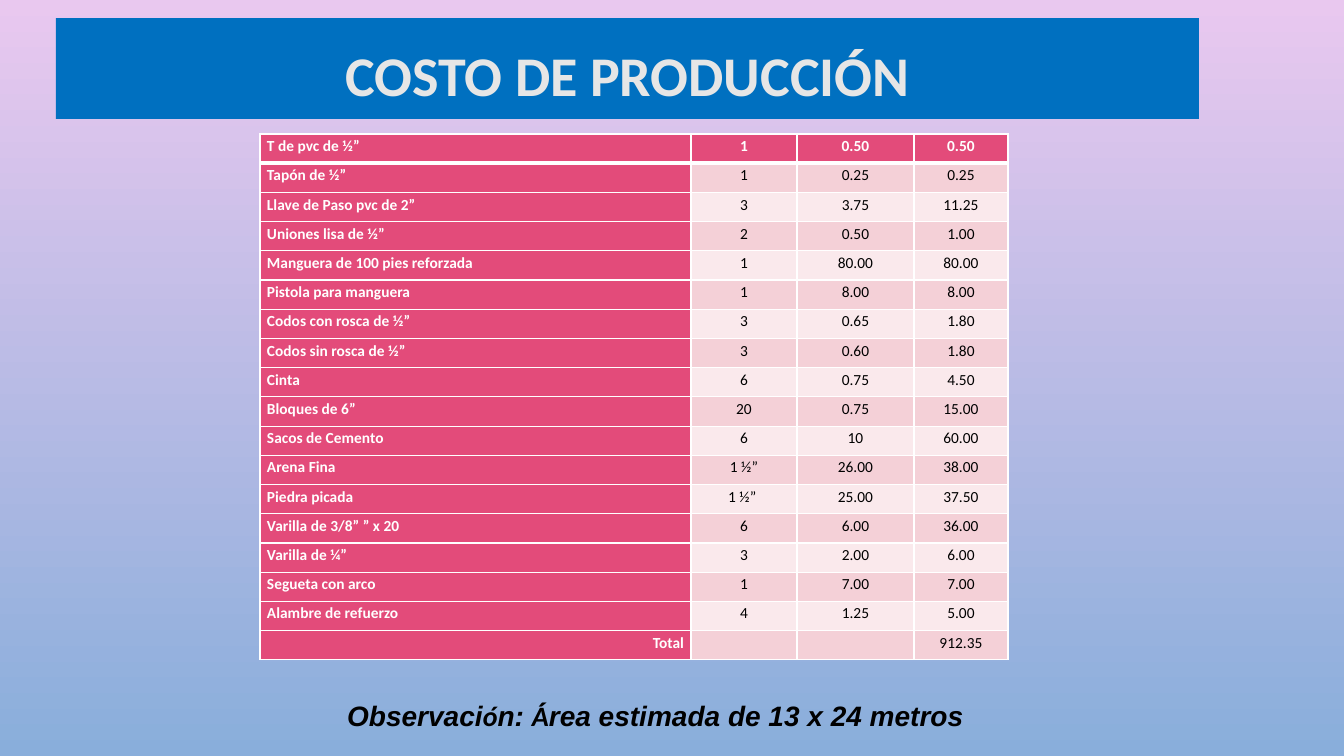
from lxml.etree import SubElement
from pptx import Presentation
from pptx.dml.color import RGBColor
from pptx.enum.shapes import MSO_SHAPE
from pptx.enum.text import MSO_ANCHOR, MSO_AUTO_SIZE, PP_ALIGN
from pptx.oxml.ns import qn
from pptx.util import Pt

SCALE = 914400 / 100.8
WHITE, BLACK, ROSE = "FFFFFF", "000000", "E34B7A"
BANDS = ("FAE9EC", "F4D0D7")
COLUMNS = (431, 106, 117, 94)
TABLE_HEIGHT = 526
COSTS = (
    ("T de pvc de ½”", "1", "0.50", "0.50"),
    ("Tapón de ½”", "1", "0.25", "0.25"),
    ("Llave de Paso pvc de 2”", "3", "3.75", "11.25"),
    ("Uniones lisa de ½”", "2", "0.50", "1.00"),
    ("Manguera de 100 pies reforzada", "1", "80.00", "80.00"),
    ("Pistola para manguera", "1", "8.00", "8.00"),
    ("Codos con rosca de ½”", "3", "0.65", "1.80"),
    ("Codos sin rosca de ½”", "3", "0.60", "1.80"),
    ("Cinta", "6", "0.75", "4.50"),
    ("Bloques de 6”", "20", "0.75", "15.00"),
    ("Sacos de Cemento", "6", "10", "60.00"),
    ("Arena Fina", "1 ½”", "26.00", "38.00"),
    ("Piedra picada", "1 ½” ", "25.00", "37.50"),
    ("Varilla de 3/8” ” x 20", "6", "6.00", "36.00"),
    ("Varilla de ¼”", "3", "2.00", "6.00"),
    ("Segueta con arco", "1", "7.00", "7.00"),
    ("Alambre de refuerzo", "4", "1.25", "5.00"),
    ("Total", "", "", "912.35"),
)
OBSERVATION = (
    ("Observaci", "Arial"),
    ("ó", "Calibri"),
    ("n: ", "Arial"),
    ("Á", "Calibri"),
    ("rea estimada de 13 x 24 metros", "Arial"),
)


def px(length):
    return round(length * SCALE)


def paint(target, color):
    target.solid()
    target.fore_color.rgb = RGBColor.from_string(color)


def apply(target, values):
    for name, value in values.items():
        setattr(target, name, value)


def add_run(paragraph, text, color, **values):
    run = paragraph.add_run()
    run.text = text
    apply(run.font, values)
    run.font.color.rgb = RGBColor.from_string(color)


def set_background(slide):
    fill = slide.background.fill
    fill.gradient()
    fill.gradient_angle = 270
    for stop, color, position in zip(fill.gradient_stops, ("E9C8EF", "89AEDB"), (0, 1)):
        stop.color.rgb = RGBColor.from_string(color)
        stop.position = position


def add_title(slide):
    banner = slide.shapes.add_shape(MSO_SHAPE.RECTANGLE, px(56), px(18), px(1143), px(101))
    banner.shadow.inherit = False
    paint(banner.fill, "0070C0")
    banner.line.fill.background()
    apply(banner.text_frame, {
        "word_wrap": True,
        "vertical_anchor": MSO_ANCHOR.MIDDLE,
        "margin_top": px(26),
        "margin_bottom": px(6),
    })
    heading = banner.text_frame.paragraphs[0]
    apply(heading, {"alignment": PP_ALIGN.CENTER, "line_spacing": 0.9})
    add_run(heading, "COSTO DE PRODUCCIÓN", "E6E6E6", size=Pt(40), name="Calibri", bold=True)


def add_borders(cell, widths):
    properties = cell._tc.get_or_add_tcPr()
    for position, (side, width) in enumerate(widths.items()):
        border = properties.makeelement(qn(f"a:{side}"), {"w": str(Pt(width))})
        solid = SubElement(border, qn("a:solidFill"))
        SubElement(solid, qn("a:srgbClr"), val=WHITE)
        properties.insert(position, border)


def fill_cell(cell, text, row, column):
    emphasized = row == 0 or column == 0
    apply(cell, {
        "margin_left": px(7),
        "margin_right": px(7),
        "margin_top": 0,
        "margin_bottom": 0,
        "vertical_anchor": MSO_ANCHOR.TOP,
    })
    paint(cell.fill, ROSE if emphasized else BANDS[row % 2])
    add_borders(cell, {
        "lnL": 1,
        "lnR": 1,
        "lnT": 3 if row == 1 else 1,
        "lnB": 3 if row == 0 else 1,
    })
    entry = cell.text_frame.paragraphs[0]
    alignment = PP_ALIGN.CENTER
    if column == 0:
        alignment = PP_ALIGN.RIGHT if text == "Total" else PP_ALIGN.LEFT
    apply(entry, {"alignment": alignment, "line_spacing": 1.15})
    if text:
        add_run(entry, text, WHITE if emphasized else BLACK,
                size=Pt(11), name="Calibri", bold=emphasized)
    else:
        SubElement(entry._p, qn("a:endParaRPr"), sz="1100")


def add_costs(slide):
    costs = slide.shapes.add_table(len(COSTS), len(COLUMNS), px(260), px(134),
                                   px(sum(COLUMNS)), px(TABLE_HEIGHT)).table
    apply(costs, {"first_row": False, "horz_banding": False})
    for column, width in zip(costs.columns, COLUMNS):
        column.width = px(width)
    for row, entries in enumerate(COSTS):
        costs.rows[row].height = px(TABLE_HEIGHT) // len(COSTS)
        for column, text in enumerate(entries):
            fill_cell(costs.cell(row, column), text, row, column)


def add_observation(slide):
    frame = slide.shapes.add_textbox(px(335), px(693), px(641), px(44)).text_frame
    apply(frame, {
        "word_wrap": False,
        "auto_size": MSO_AUTO_SIZE.SHAPE_TO_FIT_TEXT,
        "vertical_anchor": MSO_ANCHOR.MIDDLE,
    })
    note = frame.paragraphs[0]
    note.alignment = PP_ALIGN.CENTER
    for text, family in OBSERVATION:
        add_run(note, text, BLACK, size=Pt(20), name=family, bold=True, italic=True)


def main():
    deck = Presentation()
    apply(deck, {"slide_width": px(1344), "slide_height": px(756)})
    slide = deck.slides.add_slide(deck.slide_layouts[6])
    set_background(slide)
    add_title(slide)
    add_costs(slide)
    add_observation(slide)
    deck.save("out.pptx")


if __name__ == "__main__":
    main()
